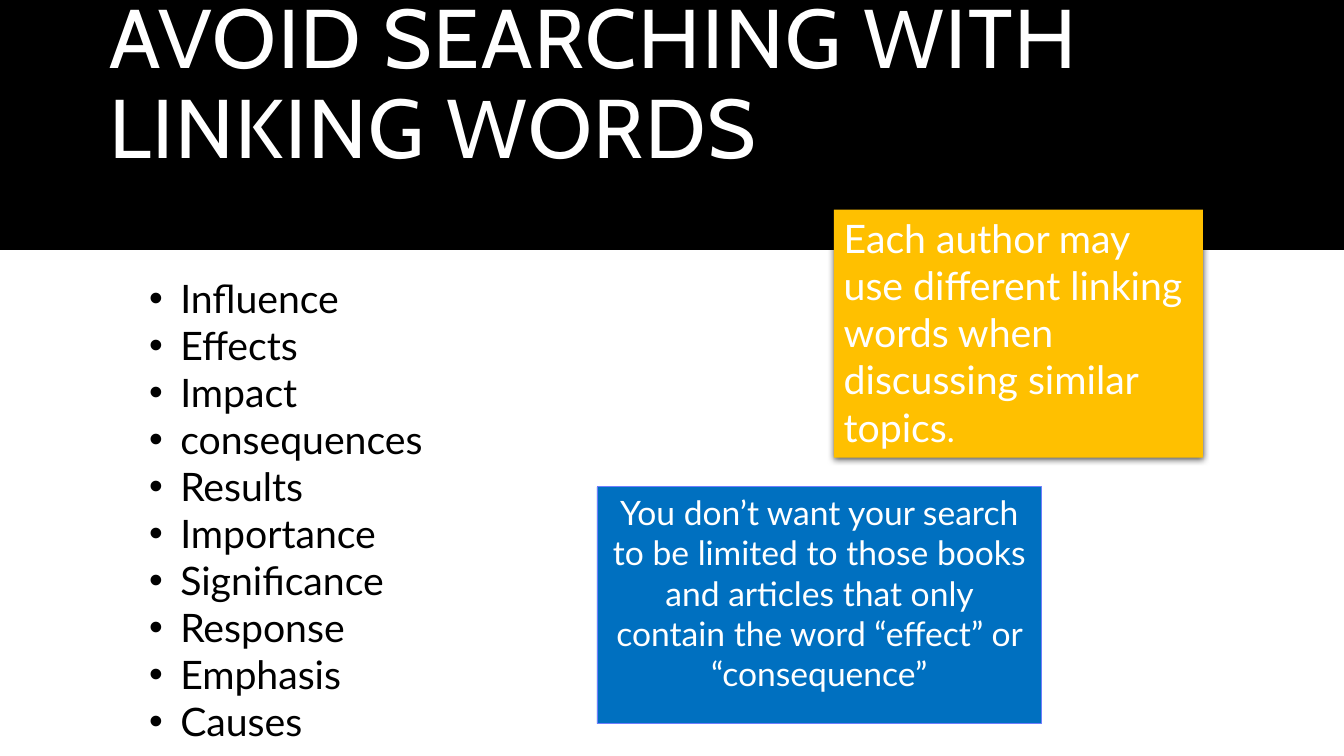
from dataclasses import dataclass
from typing import Optional

from lxml.etree import SubElement
from pptx import Presentation
from pptx.dml.color import RGBColor
from pptx.enum.shapes import MSO_SHAPE as Preset
from pptx.enum.text import MSO_ANCHOR as Anchor, PP_ALIGN as Align
from pptx.oxml.ns import qn
from pptx.util import Inches, Pt

WHITE, BLACK = "FFFFFF", "000000"
BODY_FONT, TITLE_FONT = "Lato", "Cabin"
LINKING_WORDS = [
    "Influence", "Effects", "Impact", "consequences", "Results",
    "Importance", "Significance", "Response", "Emphasis", "Causes",
]


@dataclass
class Box:
    left: float
    top: float
    width: float
    height: float

    def lengths(self) -> list:
        return [Inches(v) for v in (self.left, self.top, self.width, self.height)]


@dataclass
class Panel:
    box: Box
    fill: str
    runs: tuple = ()  # (text, size) pairs
    align: Align = Align.LEFT
    line: Optional[str] = None
    shadow: bool = False


def color(hex_value: str) -> RGBColor:
    return RGBColor.from_string(hex_value)


def add_run(paragraph, text: str, size: float, ink: str, font: str = BODY_FONT):
    run = paragraph.add_run()
    run.text = text
    run.font.size = Pt(size)
    run.font.name = font
    run.font.color.rgb = color(ink)
    return run


def add_bullet(paragraph, indent: float) -> None:
    props = paragraph._p.get_or_add_pPr()
    props.set("marL", str(Inches(indent)))
    props.set("indent", str(-Inches(indent)))
    SubElement(props, qn("a:buFont"), typeface="Arial")
    SubElement(props, qn("a:buChar"), char="•")


def add_shadow(shape) -> None:
    effects = shape._element.spPr.find(qn("a:effectLst"))
    outer = SubElement(effects, qn("a:outerShdw"), blurRad=str(Pt(4.5)),
                       dist=str(Pt(1.5)), dir="5400000", algn="ctr", rotWithShape="0")
    black = SubElement(outer, qn("a:srgbClr"), val=BLACK)
    SubElement(black, qn("a:alpha"), val="63000")


def draw_panel(slide, panel: Panel) -> None:
    shape = slide.shapes.add_shape(Preset.RECTANGLE, *panel.box.lengths())
    shape.fill.solid()
    shape.fill.fore_color.rgb = color(panel.fill)
    if panel.line:
        shape.line.color.rgb = color(panel.line)
        shape.line.width = Pt(0.5)
    else:
        shape.line.fill.background()
    shape.shadow.inherit = False
    if panel.shadow:
        add_shadow(shape)
    frame = shape.text_frame
    frame.word_wrap = True
    frame.vertical_anchor = Anchor.TOP
    paragraph = frame.paragraphs[0]
    paragraph.alignment = panel.align
    for text, size in panel.runs:
        add_run(paragraph, text, size, WHITE)


def draw_title(slide, box: Box, text: str) -> None:
    frame = slide.shapes.add_textbox(*box.lengths()).text_frame
    frame.word_wrap = True
    frame.vertical_anchor = Anchor.MIDDLE
    paragraph = frame.paragraphs[0]
    paragraph.line_spacing = 0.9
    run = add_run(paragraph, text, 59.4, WHITE, TITLE_FONT)
    run.font._element.set("spc", "120")


def draw_bullets(slide, box: Box, words: list) -> None:
    frame = slide.shapes.add_textbox(*box.lengths()).text_frame
    frame.word_wrap = True
    for i, word in enumerate(words):
        paragraph = frame.add_paragraph() if i else frame.paragraphs[0]
        add_bullet(paragraph, 0.31)
        add_run(paragraph, word, 28, BLACK)


def main() -> None:
    deck = Presentation()
    deck.slide_width, deck.slide_height = Inches(13.33), Inches(7.5)
    slide = deck.slides.add_slide(deck.slide_layouts[6])

    # Header band and title
    draw_panel(slide, Panel(Box(0, 0, 13.33, 2.48), BLACK))
    draw_title(slide, Box(0.99, 0.32, 11.13, 1.08), "AVOID SEARCHING WITH LINKING WORDS")

    # Advice panels
    authors = Panel(
        Box(8.27, 2.08, 3.66, 2.46), "FFC000",
        (("Each author may use different linking words when discussing similar topics", 28),
         (".", 24)),
        shadow=True)
    search_limits = Panel(
        Box(5.92, 4.83, 4.41, 2.35), "0070C0",
        (("You don’t want your search to be limited to those books and articles "
          "that only contain the word “effect” or “consequence”", 24),),
        align=Align.CENTER, line="6F7EFD")
    for panel in (authors, search_limits):
        draw_panel(slide, panel)

    # Linking words
    draw_bullets(slide, Box(1.38, 2.67, 4.54, 4.81), LINKING_WORDS)

    deck.save("out.pptx")


if __name__ == "__main__":
    main()
